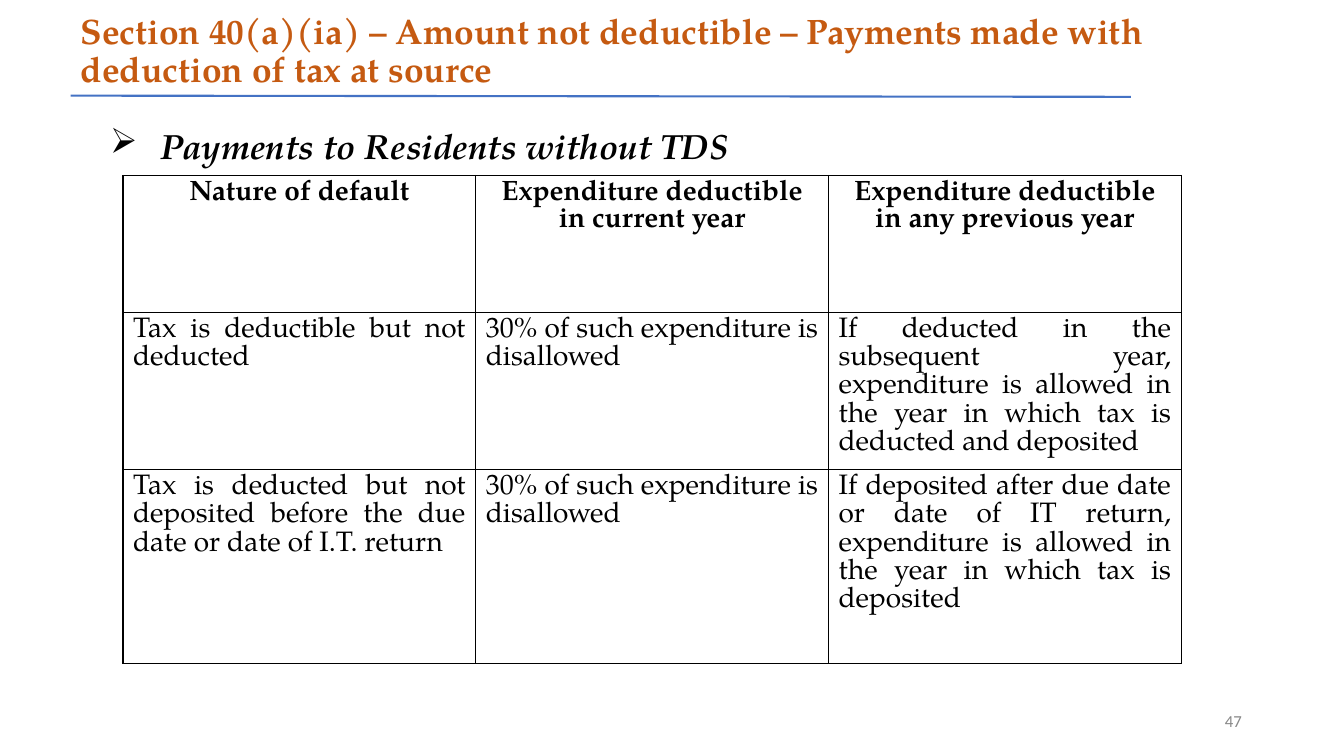
import dataclasses

import lxml.etree
import pptx
import pptx.dml.color
import pptx.enum.shapes
import pptx.enum.text
import pptx.oxml
import pptx.oxml.ns
import pptx.util

Cm = pptx.util.Cm
Pt = pptx.util.Pt
ALIGN = pptx.enum.text.PP_ALIGN
ANCHOR = pptx.enum.text.MSO_ANCHOR


@dataclasses.dataclass
class Theme:
    serif: str = "TeX Gyre Pagella"
    sans: str = "Calibri"
    paper: str = "FFFFFF"
    ink: str = "000000"
    heading: str = "C55A11"
    rule: str = "4472C4"
    muted: str = "888888"
    heading_size: float = 25.2
    lead_size: float = 25
    table_size: float = 20
    number_size: float = 12


def rgb(value):
    return pptx.dml.color.RGBColor.from_string(value)


class SlideBuilder:
    """Adds themed elements to one slide."""

    def __init__(self, slide, theme):
        self.slide = slide
        self.theme = theme

    def style(self, paragraph, size, color, align, font=None, bold=False, italic=False, pitch=None):
        paragraph.alignment = align
        if pitch:
            paragraph.line_spacing = Pt(pitch)
        face = paragraph.font
        face.name = font or self.theme.serif
        face.size = Pt(size)
        face.bold = bold
        face.italic = italic
        face.color.rgb = rgb(color)

    def placeholder(self, index, text, box, anchor):
        holder = self.slide.placeholders[index]
        holder.left, holder.top, holder.width, holder.height = map(Cm, box)
        holder.fill.solid()
        holder.fill.fore_color.rgb = rgb(self.theme.paper)
        frame = holder.text_frame
        frame.text = text
        frame.vertical_anchor = anchor
        frame.auto_size = pptx.enum.text.MSO_AUTO_SIZE.NONE
        return frame.paragraphs[0]

    def title(self, text, box):
        heading = self.placeholder(0, text, box, ANCHOR.BOTTOM)
        self.style(heading, self.theme.heading_size, self.theme.heading, ALIGN.LEFT, bold=True, pitch=27)

    def bullet(self, text, box):
        lead = self.placeholder(1, text, box, ANCHOR.TOP)
        self.style(lead, self.theme.lead_size, self.theme.ink, ALIGN.JUSTIFY, bold=True, italic=True, pitch=47)
        lead.space_before = Pt(0)
        properties = lead._p.get_or_add_pPr()
        properties.set("marL", str(Cm(2.01)))
        properties.set("indent", str(Cm(-1.27)))
        color = lxml.etree.Element(pptx.oxml.ns.qn("a:buClr"))
        lxml.etree.SubElement(color, pptx.oxml.ns.qn("a:srgbClr"), val=self.theme.ink)
        face = lxml.etree.Element(pptx.oxml.ns.qn("a:buFont"), typeface="Wingdings", charset="2")
        mark = lxml.etree.Element(pptx.oxml.ns.qn("a:buChar"), char="Ø")
        default_run = properties.find(pptx.oxml.ns.qn("a:defRPr"))
        for element in (color, face, mark):
            default_run.addprevious(element)

    def rule(self, start, end):
        line = self.slide.shapes.add_connector(
            pptx.enum.shapes.MSO_CONNECTOR.STRAIGHT, *map(Cm, start + end))
        line.line.color.rgb = rgb(self.theme.rule)
        line.line.width = Pt(1.5)
        lxml.etree.SubElement(line._element.spPr, pptx.oxml.ns.qn("a:effectLst"))

    def page_number(self, text, box):
        frame = self.slide.shapes.add_textbox(*map(Cm, box)).text_frame
        frame.word_wrap = True
        frame.vertical_anchor = ANCHOR.MIDDLE
        frame.text = text
        self.style(frame.paragraphs[0], self.theme.number_size, self.theme.muted,
                   ALIGN.RIGHT, font=self.theme.sans)

    def borders(self, cell):
        properties = cell._tc.get_or_add_tcPr()
        for side in ("lnL", "lnR", "lnT", "lnB"):
            edge = lxml.etree.SubElement(properties, pptx.oxml.ns.qn("a:" + side), w=str(Pt(1)))
            fill = lxml.etree.SubElement(edge, pptx.oxml.ns.qn("a:solidFill"))
            lxml.etree.SubElement(fill, pptx.oxml.ns.qn("a:srgbClr"), val=self.theme.ink)

    def table(self, rows, corner, column_width, row_heights):
        columns = len(rows[0])
        grid = self.slide.shapes.add_table(
            len(rows), columns, *map(Cm, corner),
            Cm(column_width * columns), Cm(sum(row_heights))).table
        grid.first_row = False
        grid.horz_banding = False
        for column in grid.columns:
            column.width = Cm(column_width)
        for row_index, (texts, height) in enumerate(zip(rows, row_heights)):
            grid.rows[row_index].height = Cm(height)
            header = row_index == 0
            for column_index, text in enumerate(texts):
                cell = grid.cell(row_index, column_index)
                cell.text = text
                self.borders(cell)
                cell.fill.solid()
                cell.fill.fore_color.rgb = rgb(self.theme.paper)
                self.style(cell.text_frame.paragraphs[0], self.theme.table_size, self.theme.ink,
                           ALIGN.CENTER if header else ALIGN.JUSTIFY,
                           bold=header, pitch=19.3 if header else 20.1)


DEFAULTS = [
    ("Nature of default",
     "Expenditure deductible in current year",
     "Expenditure deductible in any previous year"),
    ("Tax is deductible but not deducted",
     "30% of such expenditure is disallowed",
     "If deducted in the subsequent year, expenditure is allowed in the year "
     "in which tax is deducted and deposited"),
    ("Tax is deducted but not deposited before the due date or date of I.T. return",
     "30% of such expenditure is disallowed",
     "If deposited after due date or date of IT return, expenditure is allowed "
     "in the year in which tax is deposited"),
]


def main():
    deck = pptx.Presentation()
    deck.slide_width = Cm(33.87)
    deck.slide_height = Cm(19.05)
    builder = SlideBuilder(deck.slides.add_slide(deck.slide_layouts[0]), Theme())
    builder.title("Section 40(a)(ia) – Amount not deductible – Payments made with "
                  "deduction of tax at source", (1.78, 0.51, 30.61, 1.88))
    builder.bullet("Payments to Residents without TDS", (1.78, 2.41, 30.61, 16.26))
    builder.rule((1.78, 2.41), (28.5, 2.44))
    builder.page_number("47", (23.93, 17.65, 7.62, 1.02))
    builder.table(DEFAULTS, (3.1, 4.42), 8.89, (3.45, 3.96, 4.88))
    deck.save("out.pptx")


if __name__ == "__main__":
    main()
